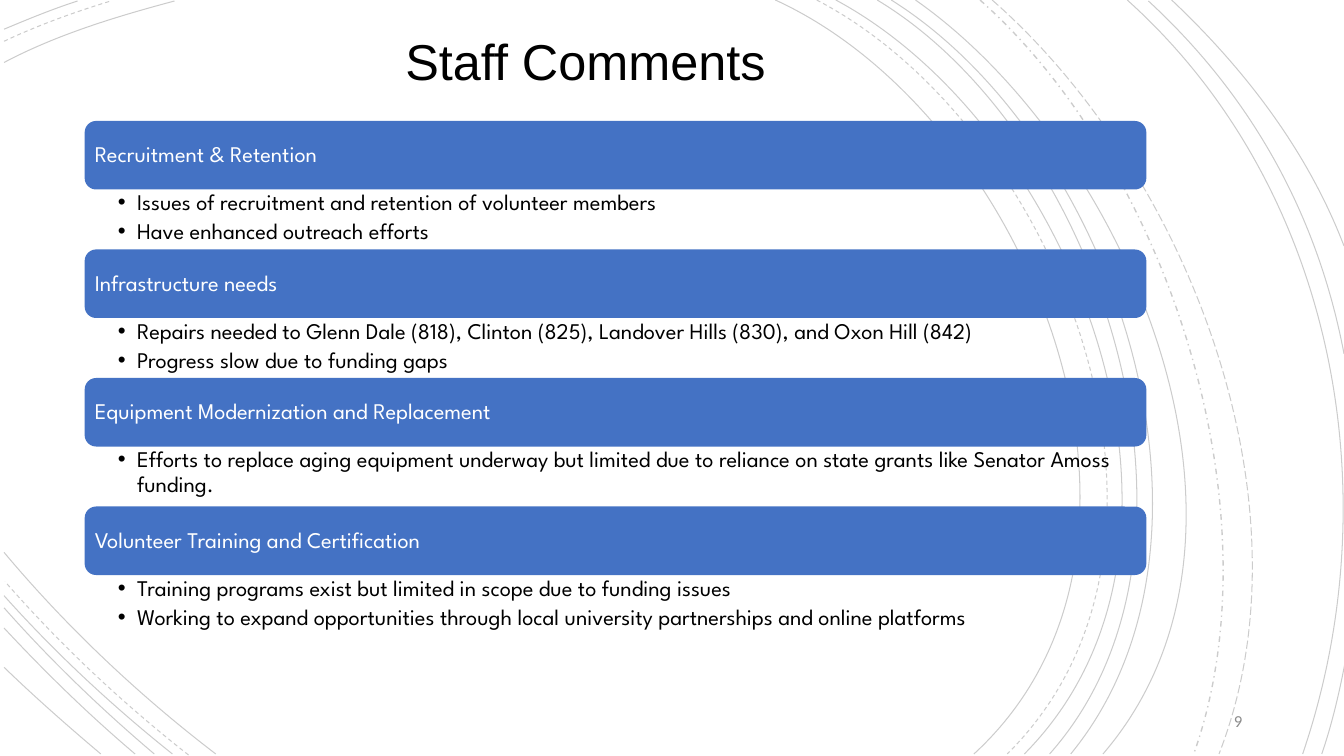
from lxml import etree
from pptx import Presentation
from pptx.dml.color import RGBColor
from pptx.enum.dml import MSO_LINE
from pptx.enum.shapes import MSO_SHAPE
from pptx.enum.text import MSO_ANCHOR, PP_ALIGN
from pptx.oxml.ns import qn
from pptx.util import Inches, Pt

BODY_FONT = "League Spartan"

SECTIONS = [
    ("Recruitment & Retention", [
        "Issues of recruitment and retention of volunteer members",
        "Have enhanced outreach efforts",
    ]),
    ("Infrastructure needs", [
        "Repairs needed to Glenn Dale (818), Clinton (825), Landover Hills (830), and Oxon Hill (842)",
        "Progress slow due to funding gaps",
    ]),
    ("Equipment Modernization and Replacement", [
        "Efforts to replace aging equipment underway but limited due to reliance on state grants like Senator Amoss funding.",
    ]),
    ("Volunteer Training and Certification", [
        "Training programs exist but limited in scope due to funding issues",
        "Working to expand opportunities through local university partnerships and online platforms",
    ]),
]

SOLID_CURVES = [
    ((7.69, 0), (10.2, 1.15), (11.92, 5.4), (9.66, 7.48)),
    ((0.04, 0.62), (0.57, 0.34), (1.17, 0.16), (1.73, 0.01)),
    ((2.14, 7.48), (1.38, 6.9), (0.66, 6.22), (0.04, 5.48)),
    ((8.29, 0), (10.65, 1.27), (12.25, 5.37), (10.16, 7.48)),
    ((0.04, 0.29), (0.28, 0.19), (0.52, 0.09), (0.77, 0.01)),
    ((1.71, 7.48), (1.12, 7.01), (0.55, 6.48), (0.04, 5.91)),
    ((8.7, 0), (10.91, 1.33), (12.25, 5.41), (10.41, 7.48)),
    ((1.53, 7.48), (1.01, 7.04), (0.5, 6.55), (0.04, 6.03)),
    ((8.84, 0), (11.04, 1.38), (12.38, 5.33), (10.62, 7.48)),
    ((1.34, 7.48), (0.88, 7.09), (0.45, 6.67), (0.04, 6.23)),
    ((9.08, 0), (11.18, 1.47), (12.82, 5.29), (10.94, 7.48)),
    ((1, 7.48), (0.68, 7.21), (0.35, 6.92), (0.04, 6.62)),
    ((11.18, 0), (13.24, 1.85), (13.8, 4.9), (12.92, 7.48)),
    ((11.39, 0.01), (12.42, 0.96), (13.07, 2.14), (13.33, 3.51)),
    ((13.34, 6.58), (13.28, 6.89), (13.21, 7.19), (13.11, 7.48)),
    ((11.62, 0), (12.35, 0.69), (12.97, 1.5), (13.33, 2.44)),
]
DASHED_CURVES = [
    ((8.1, 0), (10.5, 1.25), (12.12, 5.37), (9.99, 7.48)),
    ((0.04, 0.41), (0.38, 0.25), (0.74, 0.12), (1.1, 0.01)),
    ((1.87, 7.49), (1.22, 6.98), (0.6, 6.4), (0.05, 5.77)),
]
DASH_DOT_CURVES = [((9.72, 0), (11.59, 1.66), (12.69, 5.09), (11.84, 7.48))]
LONG_DASH_CURVES = [((9.84, 0), (11.77, 1.69), (13.06, 4.99), (12.09, 7.48))]

CURVE_STYLES = [
    (SOLID_CURVES, MSO_LINE.SOLID, 0.75),
    (DASHED_CURVES, MSO_LINE.DASH, 0.75),
    (DASH_DOT_CURVES, MSO_LINE.DASH_DOT, 1),
    (LONG_DASH_CURVES, MSO_LINE.LONG_DASH, 0.75),
]


def color(hex_value):
    return RGBColor.from_string(hex_value)


def set_font(paragraph, name, size, hex_value):
    paragraph.font.name = name
    paragraph.font.size = Pt(size)
    paragraph.font.color.rgb = color(hex_value)


def set_insets(frame, left, top, right, bottom):
    frame.margin_left, frame.margin_top = Inches(left), Inches(top)
    frame.margin_right, frame.margin_bottom = Inches(right), Inches(bottom)


def add_text_box(shapes, left, top, width, height):
    box = shapes.add_textbox(Inches(left), Inches(top), Inches(width), Inches(height))
    box.text_frame.word_wrap = True
    return box.text_frame


def bend_segments(curve):
    segments = list(curve.element.iter(qn("a:lnTo")))
    bezier = etree.Element(qn("a:cubicBezTo"))
    segments[0].addprevious(bezier)
    for segment in segments:
        bezier.append(segment[0])
        segment.getparent().remove(segment)


def add_curve(shapes, left, top, controls, dash, width):
    points = [(Inches(x), Inches(y)) for x, y in controls]
    builder = shapes.build_freeform(*points[0])
    builder.add_line_segments(points[1:], close=False)
    curve = builder.convert_to_shape(Inches(left), Inches(top))
    bend_segments(curve)
    curve.shadow.inherit = False
    curve.fill.background()
    curve.line.color.rgb = color("000000")
    curve.line.width = Pt(width)
    curve.line.dash_style = dash
    line_color = curve.line._ln.find(".//" + qn("a:srgbClr"))
    etree.SubElement(line_color, qn("a:alpha"), val="20000")


def add_background_curves(slide, left, top):
    group = slide.shapes.add_group_shape()
    for curves, dash, width in CURVE_STYLES:
        for controls in curves:
            add_curve(group.shapes, left, top, controls, dash, width)


def add_title(slide, left, top, width, height):
    title = slide.shapes.title
    title.element.getparent().append(title.element)
    title.left, title.top = Inches(left), Inches(top)
    title.width, title.height = Inches(width), Inches(height)
    title.text_frame.text = "Staff Comments"
    title.text_frame.vertical_anchor = MSO_ANCHOR.TOP
    paragraph = title.text_frame.paragraphs[0]
    paragraph.alignment = PP_ALIGN.LEFT
    paragraph.line_spacing = 0.9
    set_font(paragraph, "Arial", 36, "000000")


def add_heading(shapes, left, top, width, height, text):
    bar = shapes.add_shape(
        MSO_SHAPE.ROUNDED_RECTANGLE, Inches(left), Inches(top), Inches(width), Inches(height)
    )
    bar.shadow.inherit = False
    bar.fill.solid()
    bar.fill.fore_color.rgb = color("4472C4")
    bar.line.fill.background()
    border = 0.03
    frame = add_text_box(
        shapes, left + border, top + border, width - 2 * border, height - 2 * border
    )
    frame.text = text
    frame.vertical_anchor = MSO_ANCHOR.MIDDLE
    set_insets(frame, 0.07, 0.07, 0.07, 0.07)
    paragraph = frame.paragraphs[0]
    paragraph.line_spacing = 0.9
    paragraph.space_after = Pt(5.6)
    set_font(paragraph, BODY_FONT, 16, "FFFFFF")


def add_bullets(shapes, left, top, width, height, items):
    frame = add_text_box(shapes, left, top, width, height)
    set_insets(frame, 0.33, 0.02, 0.12, 0.02)
    frame.text = "\n".join(items)
    for paragraph in frame.paragraphs:
        paragraph.level = 1
        paragraph.line_spacing = 0.9
        paragraph.space_after = Pt(3.2)
        set_font(paragraph, BODY_FONT, 16, "000000")
        properties = paragraph._p.get_or_add_pPr()
        properties.set("marL", str(Inches(0.19)))
        properties.set("indent", str(-Inches(0.19)))
        defaults = properties.find(qn("a:defRPr"))
        defaults.addprevious(etree.Element(qn("a:buFont"), typeface="Arial"))
        defaults.addprevious(etree.Element(qn("a:buChar"), char="•"))


def add_sections(slide, left, top, width, height):
    shapes = slide.shapes.add_group_shape().shapes
    pitch = height / len(SECTIONS)
    heading_height = 0.68
    for index, (heading, items) in enumerate(SECTIONS):
        section_top = top + index * pitch
        add_heading(shapes, left, section_top, width, heading_height, heading)
        add_bullets(
            shapes, left, section_top + heading_height, width, pitch - heading_height, items
        )


def add_slide_number(slide, left, top, width, height):
    frame = add_text_box(slide.shapes, left, top, width, height)
    frame.vertical_anchor = MSO_ANCHOR.MIDDLE
    frame.text = "9"
    paragraph = frame.paragraphs[0]
    paragraph.alignment = PP_ALIGN.RIGHT
    set_font(paragraph, "Calibri", 12, "8C8C8C")


def main():
    presentation = Presentation()
    presentation.slide_width, presentation.slide_height = Inches(13.33), Inches(7.5)
    slide = presentation.slides.add_slide(presentation.slide_layouts[5])
    add_background_curves(slide, 0, 0)
    add_title(slide, 3.92, 0.32, 4.35, 0.89)
    add_sections(slide, 0.84, 1.2, 10.53, 5.1)
    add_slide_number(slide, 9.42, 6.95, 3, 0.4)
    presentation.save("out.pptx")


if __name__ == "__main__":
    main()
